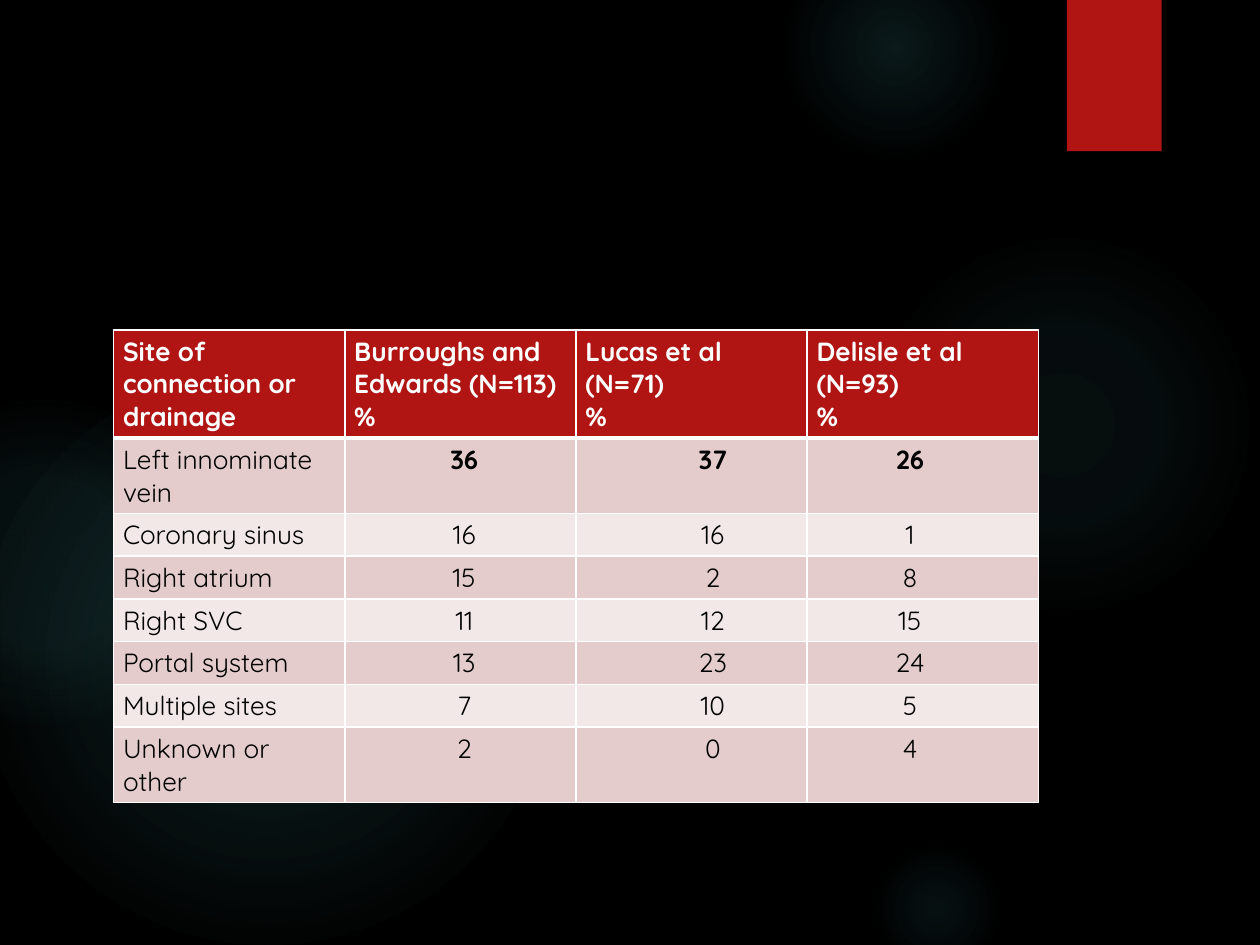
from lxml import etree
from pptx import Presentation
from pptx.dml.color import RGBColor
from pptx.enum import shapes, text
from pptx.oxml import ns
from pptx.util import Cm, Pt

COLORS = {
    "background": "000000",
    "glow": "50B9C1",
    "red": "B01513",
    "white": "FFFFFF",
    "black": "000000",
    "band_dark": "E4CCCC",
    "band_light": "F2E8E7",
}
FONT = "Quicksand"
GLOWS = [
    (17.5, 4.65, 7.82, [(0, 7), (36, 6), (69, 0)]),
    (15.8, -1.27, 4.45, [(0, 14), (36, 7), (73, 0)]),
    (17.5, 16.94, 2.74, [(0, 9), (36, 5), (66, 0)]),
    (-0.43, 7.42, 11.63, [(0, 11), (36, 10), (75, 0)]),
    (-2.34, 8.05, 6.55, [(0, 8), (36, 8), (72, 0)]),
]
HEADERS = [
    "Site of connection or drainage",
    "Burroughs and Edwards (N=113)\n%",
    "Lucas et al (N=71)\n%",
    "Delisle et al (N=93)\n%",
]
ROWS = [
    ("Left innominate vein", 36, 37, 26),
    ("Coronary sinus", 16, 16, 1),
    ("Right atrium", 15, 2, 8),
    ("Right SVC", 11, 12, 15),
    ("Portal system", 13, 23, 24),
    ("Multiple sites", 7, 10, 5),
    ("Unknown or other", 2, 0, 4),
]
ROW_HEIGHTS = [2.06, 1.42, 0.81, 0.81, 0.81, 0.81, 0.81, 1.42]
COLUMN_WIDTH = 4.66
SIDE_MARGIN = 0.19
VALUE_MARGINS = [(0.35, 0.19), (1.05, 0.19), (0.19, 0.7)]


def rgb(name):
    return RGBColor.from_string(COLORS[name])


def add_plain_shape(s, kind, left, top, width, height):
    sp = s.shapes.add_shape(kind, Cm(left), Cm(top), Cm(width), Cm(height))
    sp.shadow.inherit = False
    sp.line.fill.background()
    return sp


def add_glow(s, left, top, size, stops):
    sp = add_plain_shape(s, shapes.MSO_SHAPE.OVAL, left, top, size, size)
    sp.fill.background()
    no_fill = sp.element.spPr.find(ns.qn("a:noFill"))
    grad = etree.Element(ns.qn("a:gradFill"), rotWithShape="1")
    stop_list = etree.SubElement(grad, ns.qn("a:gsLst"))
    for position, opacity in stops:
        stop = etree.SubElement(stop_list, ns.qn("a:gs"), pos=str(position * 1000))
        color = etree.SubElement(stop, ns.qn("a:srgbClr"), val=COLORS["glow"])
        etree.SubElement(color, ns.qn("a:alpha"), val=str(opacity * 1000))
    circle = etree.SubElement(grad, ns.qn("a:path"), path="circle")
    center = dict.fromkeys("ltrb", "50000")
    etree.SubElement(circle, ns.qn("a:fillToRect"), **center)
    no_fill.getparent().replace(no_fill, grad)


def add_tab(s):
    sp = add_plain_shape(s, shapes.MSO_SHAPE.RECTANGLE, 21.51, 0, 1.91, 3.05)
    sp.fill.solid()
    sp.fill.fore_color.rgb = rgb("red")


def set_borders(cell, top, bottom):
    tc_pr = cell._tc.get_or_add_tcPr()
    widths = [("L", 1), ("R", 1), ("T", top), ("B", bottom)]
    for index, (side, width) in enumerate(widths):
        line = etree.Element(ns.qn(f"a:ln{side}"), w=str(Pt(width)))
        fill = etree.SubElement(line, ns.qn("a:solidFill"))
        etree.SubElement(fill, ns.qn("a:srgbClr"), val=COLORS["white"])
        tc_pr.insert(index, line)


def fill_cell(cell, content, fill, color, bold=False, margins=None):
    cell.fill.solid()
    cell.fill.fore_color.rgb = rgb(fill)
    cell.margin_left, cell.margin_right = map(Cm, margins or (SIDE_MARGIN, SIDE_MARGIN))
    cell.margin_top = cell.margin_bottom = Cm(0.1)
    tf = cell.text_frame
    tf.text = content
    for p in tf.paragraphs:
        p.alignment = text.PP_ALIGN.CENTER if margins else text.PP_ALIGN.LEFT
        p.font.name = FONT
        p.font.size = Pt(15)
        p.font.bold = bold
        p.font.color.rgb = rgb(color)


def add_drainage_table(s):
    frame = s.shapes.add_table(
        len(ROWS) + 1, len(HEADERS), Cm(2.29), Cm(6.65),
        Cm(COLUMN_WIDTH * len(HEADERS)), Cm(sum(ROW_HEIGHTS)))
    table = frame.table
    for column in table.columns:
        column.width = Cm(COLUMN_WIDTH)
    for row, height in zip(table.rows, ROW_HEIGHTS):
        row.height = Cm(height)

    for col, header in enumerate(HEADERS):
        cell = table.cell(0, col)
        fill_cell(cell, header, "red", "white", bold=True)
        set_borders(cell, 1, 3)

    for row, (site, *values) in enumerate(ROWS, start=1):
        band = "band_dark" if row % 2 else "band_light"
        fill_cell(table.cell(row, 0), site, band, "black")
        for col, (value, margins) in enumerate(zip(values, VALUE_MARGINS), start=1):
            fill_cell(table.cell(row, col), str(value), band, "black", row == 1, margins)
        for col in range(len(HEADERS)):
            set_borders(table.cell(row, col), 3 if row == 1 else 1, 1)


def main():
    prs = Presentation()
    prs.slide_width, prs.slide_height = Cm(25.4), Cm(19.05)
    s = prs.slides.add_slide(prs.slide_layouts[6])
    s.background.fill.solid()
    s.background.fill.fore_color.rgb = rgb("background")
    for glow in GLOWS:
        add_glow(s, *glow)
    add_tab(s)
    add_drainage_table(s)
    prs.save("out.pptx")


if __name__ == "__main__":
    main()
